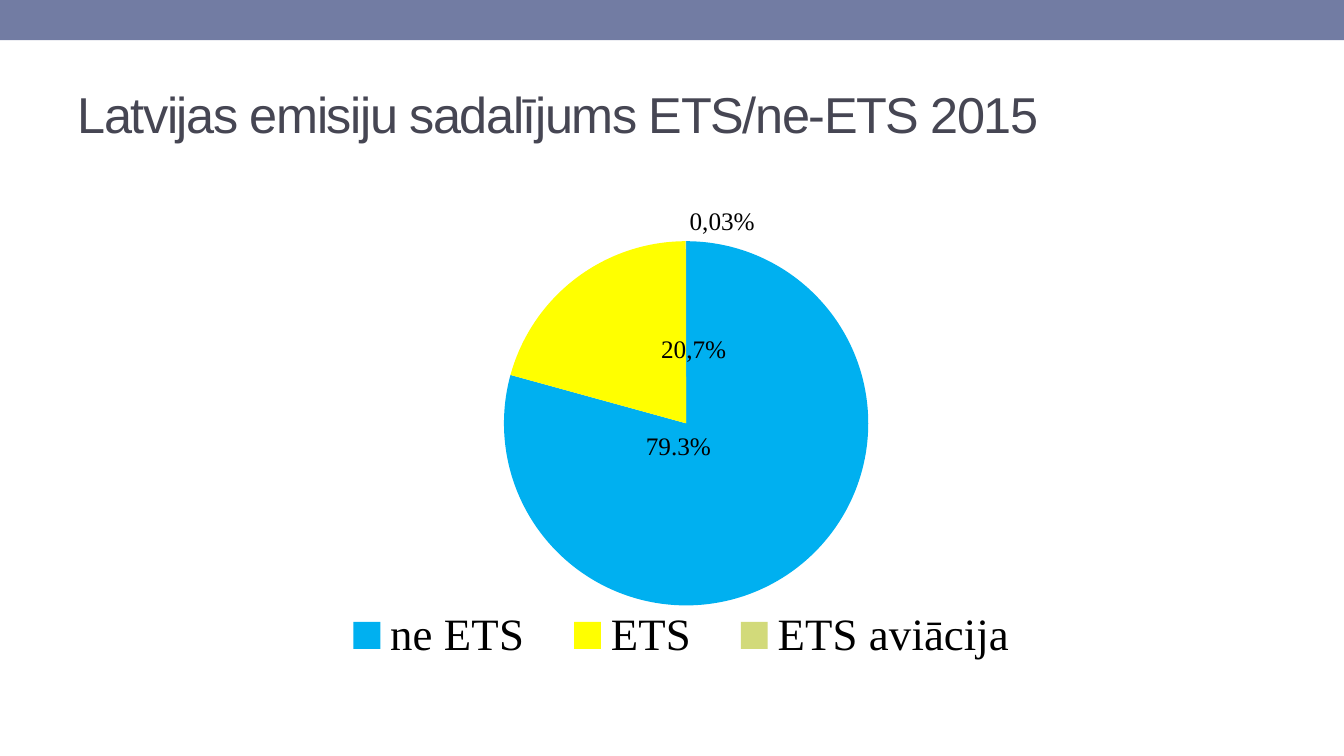
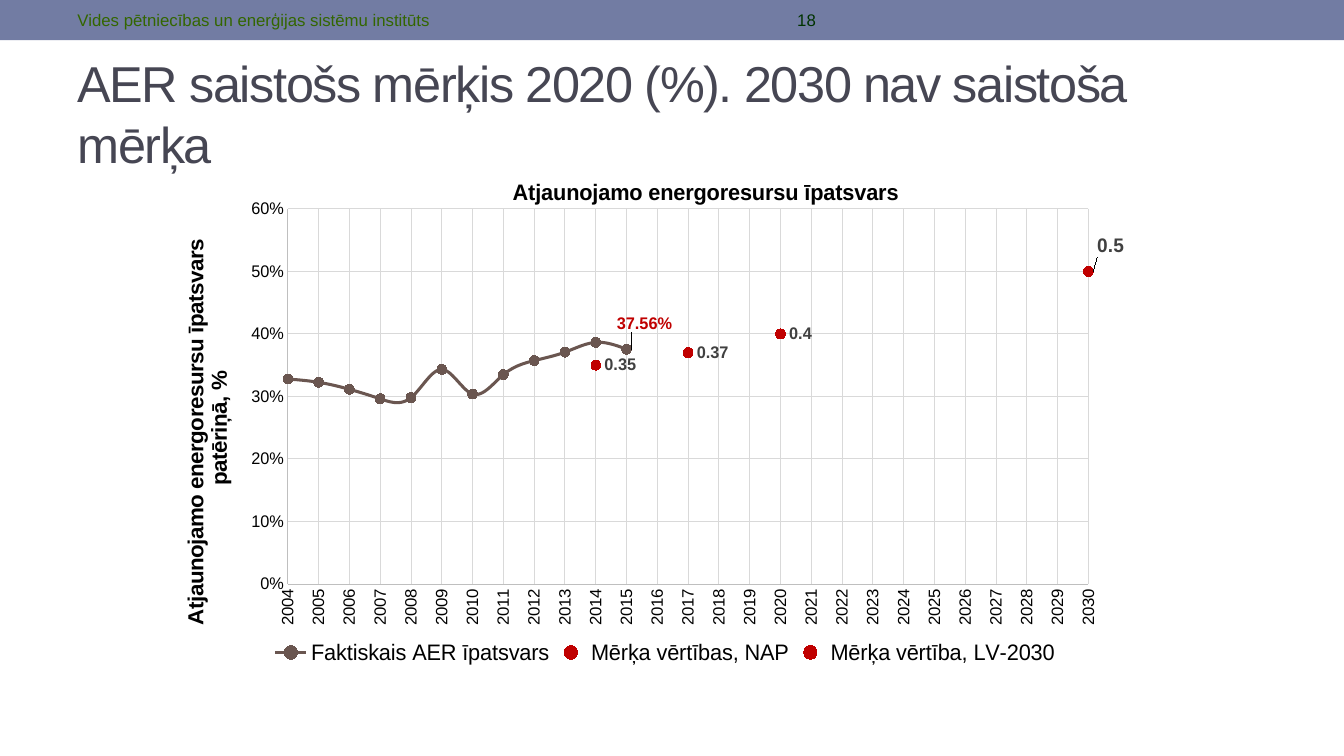
"""Build two slides on Latvian emissions and renewable energy targets."""
from pptx import Presentation
from pptx.chart.data import CategoryChartData, XyChartData
from pptx.dml.color import RGBColor
from pptx.enum.chart import XL_CHART_TYPE, XL_LABEL_POSITION, XL_LEGEND_POSITION, XL_MARKER_STYLE, XL_TICK_MARK
from pptx.enum.shapes import MSO_SHAPE
from pptx.enum.text import MSO_ANCHOR, PP_ALIGN
from pptx.oxml import parse_xml
from pptx.oxml.ns import nsdecls, qn
from pptx.util import Inches, Pt

PIE, SCATTER = XL_CHART_TYPE.PIE, XL_CHART_TYPE.XY_SCATTER_SMOOTH
RIGHT = XL_LABEL_POSITION.RIGHT
BOTTOM = XL_LEGEND_POSITION.BOTTOM
CIRCLE = XL_MARKER_STYLE.CIRCLE
NO_TICK = XL_TICK_MARK.NONE
RECTANGLE = MSO_SHAPE.RECTANGLE
MIDDLE = MSO_ANCHOR.MIDDLE
LEFT, CENTER = PP_ALIGN.LEFT, PP_ALIGN.CENTER

BAND = RGBColor(0x72, 0x7C, 0xA3)
TITLE = RGBColor(0x46, 0x46, 0x53)
BLACK = RGBColor(0, 0, 0)
GREEN = RGBColor(0x33, 0x66, 0x00)
DARK_GREEN = RGBColor(0x00, 0x33, 0x00)
BLUE = RGBColor(0x00, 0xB0, 0xF0)
YELLOW = RGBColor(0xFF, 0xFF, 0x00)
LIME = RGBColor(0xD2, 0xDA, 0x7A)
BROWN = RGBColor(0x6A, 0x56, 0x50)
RED = RGBColor(0xC0, 0x00, 0x00)
DARK_GREY = RGBColor(0x40, 0x40, 0x40)
AXIS = RGBColor(0xBF, 0xBF, 0xBF)
GRID = RGBColor(0xD9, 0xD9, 0xD9)


def add_text(s, text, box, size, color, align=LEFT):
    """Add a one-paragraph text box and return it."""
    tb = s.shapes.add_textbox(*[Inches(v) for v in box])
    tf = tb.text_frame
    tf.word_wrap = True
    tf.vertical_anchor = MIDDLE
    tf.text = text
    p = tf.paragraphs[0]
    p.alignment = align
    font = p.runs[0].font
    font.name, font.size, font.color.rgb = "Arial", Pt(size), color
    return tb


def place(parent, index, modes="", **values):
    """Give a chart part a manual layout, in fractions of the chart."""
    for old in parent.findall(qn("c:layout")):
        parent.remove(old)
    fields = [(f"{m}Mode", "edge") for m in modes.split()] + list(values.items())
    if parent.tag == qn("c:plotArea"):
        fields.insert(0, ("layoutTarget", "inner"))
    body = "".join(f'<c:{k} val="{v}"/>' for k, v in fields)
    parent.insert(index, parse_xml(
        f'<c:layout {nsdecls("c")}><c:manualLayout>{body}</c:manualLayout></c:layout>'))


prs = Presentation()
prs.slide_width, prs.slide_height = Inches(13.33), Inches(7.5)

slides = []
for title in ("Latvijas emisiju sadalījums ETS/ne-ETS 2015",
              "AER saistošs mērķis 2020 (%). 2030 nav saistoša mērķa"):
    s = prs.slides.add_slide(prs.slide_layouts[6])
    band = s.shapes.add_shape(RECTANGLE, 0, 0, prs.slide_width, Inches(0.4))
    band.shadow.inherit = False
    band.fill.solid()
    band.fill.fore_color.rgb = BAND
    band.line.fill.background()
    tb = add_text(s, title, (0.67, 0.58, 12, 1.08), 36, TITLE)
    tb.element.xpath(".//a:rPr")[0].set("spc", "-100")
    slides.append(s)
pie_slide, target_slide = slides

data = CategoryChartData()
data.categories = ["ne ETS", "ETS", "ETS aviācija"]
data.add_series("Series 1", (79.3, 20.7, 0.03))
pie = pie_slide.shapes.add_chart(
    PIE, Inches(2.17), Inches(1.75), Inches(9), Inches(4.95), data).chart

shares = (0.3279, 0.3226, 0.3114, 0.2962, 0.2981, 0.3432,
          0.3038, 0.3348, 0.3573, 0.3708, 0.3865, 0.3756)
data = XyChartData()
for name, values in (("Faktiskais AER īpatsvars", dict(enumerate(shares, 2004))),
                     ("Mērķa vērtības, NAP", {2014: 0.35, 2017: 0.37, 2020: 0.4}),
                     ("Mērķa vērtība, LV-2030", {2030: 0.5})):
    xy = data.add_series(name)
    for year in range(2004, 2031):
        xy.add_data_point(year, values.get(year))
scatter = target_slide.shapes.add_chart(
    SCATTER, Inches(1.76), Inches(1.67), Inches(9.39), Inches(5.03), data).chart
for empty in scatter.element.xpath('.//c:yVal//c:pt[c:v="None"]'):
    empty.getparent().remove(empty)

for chart, name, size, legend_size, legend_at, plot_at in (
        (pie, "Times New Roman", 6, 32, (0.11, 0.86, 0.8, 0.12), (0.06, 0.13, 0.91, 0.73)),
        (scatter, "Arial", 10, 16, (0.1, 0.92, 0.86, 0.07), (0.12, 0.08, 0.87, 0.74))):
    chart.font.name, chart.font.size, chart.font.color.rgb = name, Pt(size), BLACK
    chart.has_legend = True
    legend = chart.legend
    legend.position = BOTTOM
    legend.include_in_layout = False
    legend.font.name, legend.font.size, legend.font.color.rgb = name, Pt(legend_size), BLACK
    for tag, index, box in (("legend", 1, legend_at), ("plotArea", 0, plot_at)):
        part = chart.element.xpath(f".//c:{tag}")[0]
        place(part, index, "x y", **dict(zip("xywh", box)))

pie.has_title = False
pie.plots[0].vary_by_categories = True
series = pie.plots[0].series[0]
labels = series.data_labels
labels.show_percentage, labels.show_value = True, False
labels.number_format, labels.number_format_is_linked = "0.0%", False
labels.font.size = Pt(18)
for i, (color, text) in enumerate(((BLUE, None), (YELLOW, "20,7%"), (LIME, "0,03%"))):
    point = series.points[i]
    point.format.fill.solid()
    point.format.fill.fore_color.rgb = color
    label = point.data_label
    if text:
        label.text_frame.text = text
        font = label.text_frame.paragraphs[0].runs[0].font
    else:
        font = label.font
    font.name, font.size, font.color.rgb = "Times New Roman", Pt(18), BLACK
for dLbl, (x, y) in zip(pie.element.xpath(".//c:dLbl"),
                        ((-0.17, -0.28), (0.17, 0.18), (0.04, 0))):
    place(dLbl, 1, x=x, y=y)
percent = pie.element.xpath(".//c:dLbl")[0]
percent.insert(2, parse_xml(f'<c:numFmt {nsdecls("c")} formatCode="0.0%" sourceLinked="0"/>'))
percent.find(qn("c:showVal")).set("val", "0")
percent.find(qn("c:showPercent")).set("val", "1")
for leader in pie.element.xpath(".//c:showLeaderLines"):
    leader.set("val", "0")

x_axis, y_axis = scatter.category_axis, scatter.value_axis
for axis, low, high, step, fmt in ((x_axis, 2004, 2030, 1, "General"),
                                   (y_axis, 0, 0.6, 0.1, "0%")):
    axis.minimum_scale, axis.maximum_scale, axis.major_unit = low, high, step
    axis.major_tick_mark = axis.minor_tick_mark = NO_TICK
    axis.has_major_gridlines = True
    for line, color in ((axis.format.line, AXIS), (axis.major_gridlines.format.line, GRID)):
        line.color.rgb, line.width = color, Pt(0.75)
    ticks = axis.tick_labels
    ticks.number_format, ticks.number_format_is_linked = fmt, False
    ticks.font.name, ticks.font.size, ticks.font.color.rgb = "Arial", Pt(12), BLACK

for part, owner, text, x, y in (
        (scatter.chart_title, "c:chart", "Atjaunojamo energoresursu īpatsvars", 0.36, 0.01),
        (y_axis.axis_title, "c:valAx",
         "Atjaunojamo energoresursu īpatsvars patēriņā, %", 0, 0.11)):
    part.text_frame.text = text
    font = part.text_frame.paragraphs[0].runs[0].font
    font.name, font.size, font.bold, font.color.rgb = "Arial", Pt(16), True, BLACK
    place(scatter.element.xpath(f".//{owner}/c:title")[0], 1, "x y", x=x, y=y)
for body in scatter.element.xpath(".//c:valAx[1]/c:txPr/a:bodyPr | .//c:valAx/c:title//a:bodyPr"):
    body.set("rot", "-5400000")
    body.set("vert", "horz")

scatter.plots[0].vary_by_categories = False
for series, color, labelled, label_color, size in zip(
        scatter.plots[0].series, (BROWN, RED, RED), ((2015,), (2014, 2017, 2020), (2030,)),
        (RED, DARK_GREY, DARK_GREY), (12, 12, 14)):
    marker = series.marker
    marker.style, marker.size = CIRCLE, 7
    marker.format.fill.solid()
    marker.format.fill.fore_color.rgb = color
    marker.format.line.color.rgb = color
    if color == BROWN:
        series.format.line.color.rgb, series.format.line.width = color, Pt(2.25)
    else:
        series.format.line.fill.background()
    for year in labelled:
        label = series.points[year - 2004].data_label
        font = label.font
        font.name, font.size, font.bold, font.color.rgb = "Arial", Pt(size), True, label_color
        label.position = RIGHT
for smooth in scatter.element.xpath(".//c:ser/c:smooth"):
    smooth.set("val", "1")
for show in scatter.element.xpath(".//c:ser/c:dLbls/c:showVal"):
    show.set("val", "0")

all_labels = scatter.element.xpath(".//c:dLbl")
for dLbl, x, y, fmt in ((all_labels[0], -0.02, -0.05, "0.00%"),
                        (all_labels[-1], 0, -0.05, "General")):
    place(dLbl, 1, x=x, y=y)
    dLbl.insert(2, parse_xml(f'<c:numFmt {nsdecls("c")} formatCode="{fmt}" sourceLinked="0"/>'))
    dLbl.getparent().append(parse_xml(
        f'<c:extLst {nsdecls("c")}><c:ext uri="{{CE6537A1-D6FC-4f65-9D91-7224C49458BB}}" '
        'xmlns:c15="http://schemas.microsoft.com/office/drawing/2012/chart">'
        '<c15:showLeaderLines val="1"/></c:ext></c:extLst>'))

add_text(target_slide, "18", (5, 0.02, 6, 0.36), 12, DARK_GREEN, CENTER)
add_text(target_slide, "Vides pētniecības un enerģijas sistēmu institūts",
         (0.67, 0.02, 4.22, 0.36), 12, GREEN)

prs.save("out.pptx")
